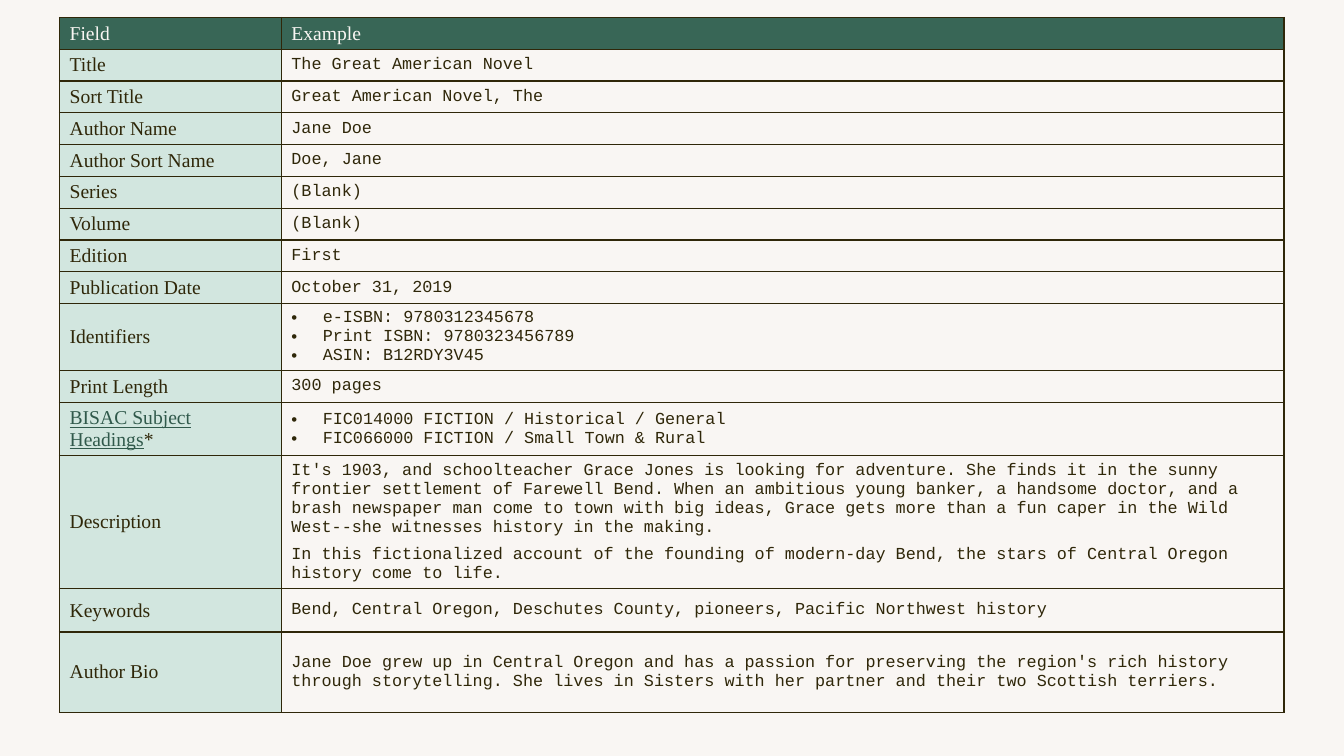
from dataclasses import dataclass

from lxml.etree import SubElement
from pptx import Presentation
from pptx.dml.color import RGBColor
from pptx.enum.text import MSO_ANCHOR
from pptx.oxml.ns import qn
from pptx.util import Cm, Pt

HEADER = ("Field", "Example")
SHORT_ROW = 0.64
# Each row: field runs, example paragraphs, bulleted, height in cm
ROWS = [
    (["Title"], ["The Great American Novel"], False, SHORT_ROW),
    (["Sort Title"], ["Great American Novel, The"], False, SHORT_ROW),
    (["Author Name"], ["Jane Doe"], False, SHORT_ROW),
    (["Author Sort Name"], ["Doe, Jane"], False, SHORT_ROW),
    (["Series"], ["(Blank)"], False, SHORT_ROW),
    (["Volume"], ["(Blank)"], False, SHORT_ROW),
    (["Edition"], ["First"], False, SHORT_ROW),
    (["Publication Date"], ["October 31, 2019"], False, SHORT_ROW),
    (["Identifiers"],
     ["e-ISBN: 9780312345678", "Print ISBN: 9780323456789", "ASIN: B12RDY3V45"],
     True, 1.55),
    (["Print Length"], ["300 pages"], False, SHORT_ROW),
    (["BISAC Subject Headings", "*"],
     ["FIC014000 FICTION / Historical / General",
      "FIC066000 FICTION / Small Town & Rural"],
     True, 1.09),
    (["Description"],
     ["It's 1903, and schoolteacher Grace Jones is looking for adventure. "
      "She finds it in the sunny frontier settlement of Farewell Bend. "
      "When an ambitious young banker, a handsome doctor, and a brash newspaper man "
      "come to town with big ideas, Grace gets more than a fun caper in the Wild "
      "West--she witnesses history in the making.",
      "In this fictionalized account of the founding of modern-day Bend, "
      "the stars of Central Oregon history come to life."],
     False, 3.35),
    (["Keywords"],
     ["Bend, Central Oregon, Deschutes County, pioneers, Pacific Northwest history"],
     False, 1.09),
    (["Author Bio"],
     ["Jane Doe grew up in Central Oregon and has a passion for preserving the "
      "region's rich history through storytelling. She lives in Sisters with her "
      "partner and their two Scottish terriers."],
     False, 2.03),
]
LINK_LIKE = "BISAC Subject Headings"

TABLE_LEFT, TABLE_TOP = Cm(1.5), Cm(0.44)
COLUMN_WIDTHS = (Cm(5.59), Cm(25.27))
BULLET_INDENT = Cm(0.79)


@dataclass(frozen=True)
class Theme:
    paper: str = "F9F6F3"
    ink: str = "2F2709"
    header: str = "386656"
    field: str = "D2E6DF"
    link: str = "30594B"
    border: Pt = Pt(1)
    paragraph_gap: Pt = Pt(6)


THEME = Theme()
FIELD_FONT = {"name": "Times New Roman", "size": Pt(14), "bold": False}
EXAMPLE_FONT = {"name": "Courier New", "size": Pt(12), "bold": False}


def add_run(paragraph, text, font_format, color):
    run = paragraph.add_run()
    run.text = text
    for name, value in font_format.items():
        setattr(run.font, name, value)
    run.font.color.rgb = RGBColor.from_string(color)


def format_cell(cell, fill=None):
    """Border the cell, centre it vertically and fill it, or leave it clear."""
    properties = cell._tc.get_or_add_tcPr()
    for side in ("a:lnL", "a:lnR", "a:lnT", "a:lnB"):
        line = SubElement(properties, qn(side), w=str(int(THEME.border)))
        solid = SubElement(line, qn("a:solidFill"))
        SubElement(solid, qn("a:srgbClr"), val=THEME.ink)
    cell.vertical_anchor = MSO_ANCHOR.MIDDLE
    if fill:
        cell.fill.solid()
        cell.fill.fore_color.rgb = RGBColor.from_string(fill)
    else:
        cell.fill.background()


def add_bullet(paragraph):
    properties = paragraph._p.get_or_add_pPr()
    properties.set("marL", str(int(BULLET_INDENT)))
    properties.set("indent", str(-int(BULLET_INDENT)))
    SubElement(properties, qn("a:buFont"), typeface="Arial")
    SubElement(properties, qn("a:buChar"), char="•")


def write_field(cell, runs):
    format_cell(cell, THEME.field)
    for text in runs:
        linked = text == LINK_LIKE
        add_run(cell.text_frame.paragraphs[0], text,
                FIELD_FONT | {"underline": linked},
                THEME.link if linked else THEME.ink)


def write_example(cell, texts, bulleted):
    format_cell(cell)
    frame = cell.text_frame
    for index, text in enumerate(texts):
        paragraph = frame.add_paragraph() if index else frame.paragraphs[0]
        if bulleted:
            add_bullet(paragraph)
        elif index < len(texts) - 1:
            paragraph.space_after = THEME.paragraph_gap
        add_run(paragraph, text, EXAMPLE_FONT, THEME.ink)


def add_metadata_table(slide):
    heights = [Cm(height) for height in (SHORT_ROW, *(row[-1] for row in ROWS))]
    table = slide.shapes.add_table(
        len(heights), len(HEADER), TABLE_LEFT, TABLE_TOP,
        sum(COLUMN_WIDTHS), sum(heights)).table
    table.horz_banding = False
    for column, width in zip(table.columns, COLUMN_WIDTHS):
        column.width = width
    for row, height in zip(table.rows, heights):
        row.height = height

    for cell, text in zip(table.rows[0].cells, HEADER):
        format_cell(cell, THEME.header)
        add_run(cell.text_frame.paragraphs[0], text, FIELD_FONT, THEME.paper)
    for index, (field, example, bulleted, _) in enumerate(ROWS, start=1):
        write_field(table.cell(index, 0), field)
        write_example(table.cell(index, 1), example, bulleted)


def main():
    presentation = Presentation()
    presentation.slide_width, presentation.slide_height = Cm(33.87), Cm(19.05)
    blank_layout = presentation.slide_layouts[6]
    slide = presentation.slides.add_slide(blank_layout)
    background = slide.background.fill
    background.solid()
    background.fore_color.rgb = RGBColor.from_string(THEME.paper)
    add_metadata_table(slide)
    presentation.save("out.pptx")


if __name__ == "__main__":
    main()
